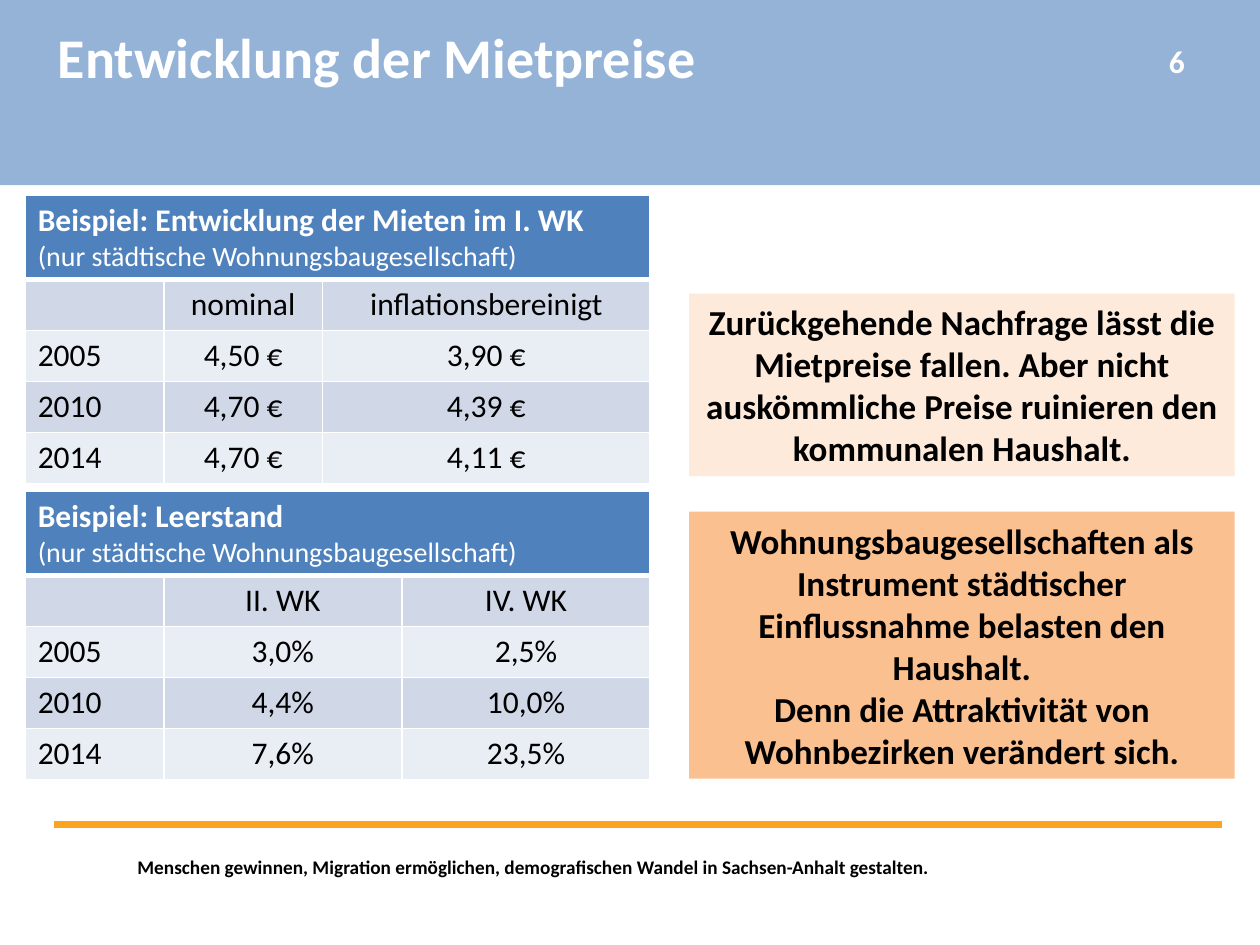
from collections import namedtuple

from lxml.etree import SubElement
from pptx import Presentation
from pptx.dml.color import RGBColor
from pptx.enum.shapes import MSO_CONNECTOR, MSO_SHAPE
from pptx.enum.text import MSO_ANCHOR as Anchor, MSO_AUTO_SIZE as AutoSize, PP_ALIGN as Align
from pptx.oxml import parse_xml
from pptx.oxml.ns import nsdecls, qn
from pptx.util import Inches, Pt

WHITE = RGBColor(0xFF, 0xFF, 0xFF)
BLACK = RGBColor(0x00, 0x00, 0x00)
BAND_BLUE = RGBColor(0x95, 0xB3, 0xD7)
HEAD_BLUE = RGBColor(0x4F, 0x81, 0xBD)
ROW_FILLS = RGBColor(0xD0, 0xD8, 0xE8), RGBColor(0xE9, 0xED, 0xF4)
PALE_ORANGE = RGBColor(0xFD, 0xEA, 0xDA)
ORANGE = RGBColor(0xFA, 0xC0, 0x90)
RULE_ORANGE = RGBColor(0xFC, 0xA3, 0x20)

# The slide is a grid of 100 columns by 75 rows.
UNIT = Inches(0.1)
COLUMNS, ROWS = 100, 75
HEAD_ROW, BODY_ROW = 6.6, 4.05
Box = namedtuple("Box", "left top width height")


def units(*values):
    """Grid units as slide lengths."""
    return [round(value * UNIT) for value in values]


def write(frame, lines, size, color, bold=True, align=Align.CENTER):
    for index, line in enumerate(lines):
        paragraph = frame.paragraphs[0] if index == 0 else frame.add_paragraph()
        paragraph.text = line
        paragraph.alignment = align
        font = paragraph.font
        font.name, font.size, font.bold = "Calibri", Pt(size), bold
        font.color.rgb = color


def add_panel(slide, box, fill):
    panel = slide.shapes.add_shape(MSO_SHAPE.RECTANGLE, *units(*box))
    panel.shadow.inherit = False
    panel.fill.solid()
    panel.fill.fore_color.rgb = fill
    panel.line.fill.background()
    return panel


def add_label(slide, box, text, size, color, anchor):
    frame = slide.shapes.add_textbox(*units(*box)).text_frame
    frame.word_wrap = True
    frame.vertical_anchor = anchor
    write(frame, [text], size, color)


def add_header(slide, box, title, number):
    add_panel(slide, box, BAND_BLUE)
    holder = slide.shapes.title
    holder.element.getparent().append(holder.element)  # in front of the band
    holder.left, holder.top, holder.width, holder.height = units(
        box.left + 3.6, box.top + 1.3, 53.1, 6.4)
    frame = holder.text_frame
    frame.word_wrap = False
    frame.auto_size = AutoSize.NONE
    frame.vertical_anchor = Anchor.TOP
    write(frame, [title], 32, WHITE, align=Align.LEFT)
    number_box = Box(box.left + box.width - 10.6, box.top + 2.8, 8, 4)
    add_label(slide, number_box, number, 18, WHITE, Anchor.MIDDLE)


def add_footer(slide, box, text):
    left, top, right = units(box.left, box.top, box.left + box.width)
    rule = slide.shapes.add_connector(MSO_CONNECTOR.STRAIGHT, left, top, right, top)
    rule.line.color.rgb = RULE_ORANGE
    rule.line.width = Pt(4)
    SubElement(rule.element.spPr, qn("a:effectLst"))
    text_box = Box(box.left - 1.1, box.top + 2, 78.3, box.height - 2)
    add_label(slide, text_box, text, 11, BLACK, Anchor.TOP)


def add_message(slide, box, lines, fill):
    frame = add_panel(slide, box, fill).text_frame
    frame.word_wrap = True
    frame.vertical_anchor = Anchor.MIDDLE
    write(frame, lines, 20, BLACK)


def style_cell(cell, fill, top=1, bottom=1):
    """Fill the cell and draw white borders, with widths in points."""
    properties = cell._tc.get_or_add_tcPr()
    for side, width in zip("LRTB", (1, 1, top, bottom)):
        properties.append(parse_xml(
            f'<a:ln{side} {nsdecls("a")} w="{Pt(width)}"><a:solidFill>'
            f'<a:srgbClr val="{WHITE}"/></a:solidFill></a:ln{side}>'))
    cell.fill.solid()
    cell.fill.fore_color.rgb = fill


def add_rent_table(slide, box, widths, heading, rows):
    table = slide.shapes.add_table(len(rows) + 1, len(widths), *units(*box)).table
    for column, width in zip(table.columns, units(*widths)):
        column.width = width
    heights = units(HEAD_ROW, *[BODY_ROW] * len(rows))
    for row, height in zip(table.rows, heights):
        row.height = height

    for cell in table.rows[0].cells:
        style_cell(cell, HEAD_BLUE, bottom=3)
    head = table.cell(0, 0)
    head.merge(table.cell(0, len(widths) - 1))
    write(head.text_frame, [heading, "(nur städtische Wohnungsbaugesellschaft)"],
          18, WHITE, align=Align.LEFT)
    note = head.text_frame.paragraphs[1].font
    note.size, note.bold = Pt(16), False

    for r, values in enumerate(rows):
        for c, value in enumerate(values):
            cell = table.cell(r + 1, c)
            style_cell(cell, ROW_FILLS[r % 2], top=3 if r == 0 else 1)
            write(cell.text_frame, [value], 18, BLACK, bold=False,
                  align=Align.CENTER if c else Align.LEFT)


def main():
    presentation = Presentation()
    presentation.slide_width, presentation.slide_height = units(COLUMNS, ROWS)
    slide = presentation.slides.add_slide(presentation.slide_layouts[5])

    add_header(slide, Box(0, 0, COLUMNS, 14.7), "Entwicklung der Mietpreise", "6")
    add_footer(slide, Box(4.3, 65.4, 92.7, 6.7),
               "Menschen gewinnen, Migration ermöglichen, "
               "demografischen Wandel in Sachsen-Anhalt gestalten.")

    table_height = HEAD_ROW + 4 * BODY_ROW
    add_rent_table(slide, Box(2, 15.5, 49.6, table_height), (11, 12.6, 26),
                   "Beispiel: Entwicklung der Mieten im I. WK",
                   [("", "nominal", "inflationsbereinigt"),
                    ("2005", "4,50 €", "3,90 €"),
                    ("2010", "4,70 €", "4,39 €"),
                    ("2014", "4,70 €", "4,11 €")])
    add_rent_table(slide, Box(2, 39, 49.6, table_height), (11, 18.9, 19.7),
                   "Beispiel: Leerstand",
                   [("", "II. WK", "IV. WK"),
                    ("2005", "3,0%", "2,5%"),
                    ("2010", "4,4%", "10,0%"),
                    ("2014", "7,6%", "23,5%")])

    add_message(slide, Box(54.7, 23.3, 43.3, 14.5),
                ["Zurückgehende Nachfrage lässt die Mietpreise fallen. Aber nicht "
                 "auskömmliche Preise ruinieren den kommunalen Haushalt."], PALE_ORANGE)
    add_message(slide, Box(54.7, 40.6, 43.3, 21.2),
                ["Wohnungsbaugesellschaften als Instrument städtischer "
                 "Einflussnahme belasten den Haushalt.",
                 "Denn die Attraktivität von Wohnbezirken verändert sich."], ORANGE)

    presentation.save("out.pptx")


if __name__ == "__main__":
    main()
